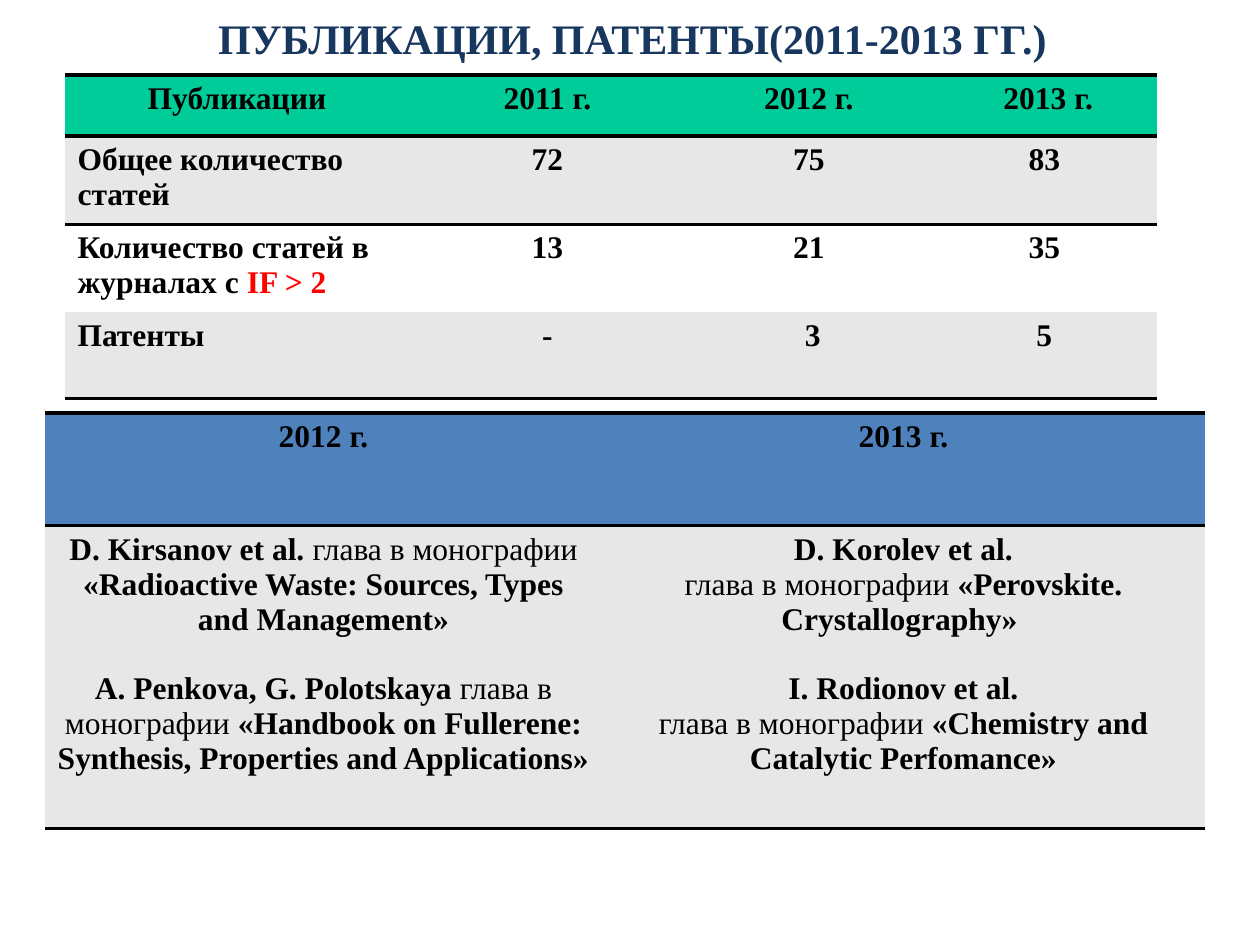
import dataclasses

import lxml.etree
import pptx
import pptx.dml.color
import pptx.enum.text
import pptx.oxml
import pptx.oxml.ns
import pptx.util

PX = 914400 // 126
FONT = "Times New Roman"
BLACK, NAVY, RED = "000000", "17375E", "FF0000"
GREEN, BLUE, GRAY, WHITE = "00CC99", "4F81BD", "E7E7E7", "FFFFFF"
LEFT, CENTER = pptx.enum.text.PP_ALIGN.LEFT, pptx.enum.text.PP_ALIGN.CENTER
NO_STYLE = "{2D5ABB26-0587-4C30-8999-92F81FD0307C}"


@dataclasses.dataclass
class Run:
    text: str
    bold: bool = True
    color: str = BLACK
    size: int = 18


@dataclasses.dataclass
class Para:
    runs: list[Run]
    align: int = CENTER
    before: int = 0


@dataclasses.dataclass
class Grid:
    x: int
    y: int
    cols: list[int]
    rows: list[int]
    fills: list[str]
    cells: list[list[list[Para]]]


def px(n: int) -> int:
    return pptx.util.Emu(n * PX)


def rgb(color: str) -> pptx.dml.color.RGBColor:
    return pptx.dml.color.RGBColor.from_string(color)


def line(tag: str, points: float, color: str) -> lxml.etree._Element:
    return pptx.oxml.parse_xml(
        f'<a:{tag} {pptx.oxml.ns.nsdecls("a")} w="{int(points * 12700)}">'
        f'<a:solidFill><a:srgbClr val="{color}"/></a:solidFill></a:{tag}>')


def write(tf, paras: list[Para]) -> None:
    for i, para in enumerate(paras):
        p = tf.add_paragraph() if i else tf.paragraphs[0]
        p.alignment = para.align
        p.space_before = pptx.util.Pt(para.before)
        for run in para.runs:
            r = p.add_run()
            r.text = run.text
            fmt = {"name": FONT, "size": pptx.util.Pt(run.size), "bold": run.bold}
            for key, value in fmt.items():
                setattr(r.font, key, value)
            r.font.color.rgb = rgb(run.color)


def draw_title(s, text: str) -> None:
    sp = s.shapes.add_textbox(px(84), px(6), px(1097), px(63))
    tf = sp.text_frame
    tf.word_wrap = True
    write(tf, [Para([Run(text, color=NAVY, size=24)])])
    # Thin outline around the letters
    tf.paragraphs[0].runs[0].font._element.insert(0, line("ln", 0.71, BLACK))


def draw_grid(s, grid: Grid) -> None:
    frame = s.shapes.add_table(len(grid.rows), len(grid.cols), px(grid.x), px(grid.y),
                               px(sum(grid.cols)), px(sum(grid.rows)))
    table = frame.table
    table.first_row = table.horz_banding = False
    table._tbl.tblPr.find(pptx.oxml.ns.qn("a:tableStyleId")).text = NO_STYLE
    for col, width in zip(table.columns, grid.cols):
        col.width = px(width)
    last = len(grid.rows) - 1
    for i, (row, height) in enumerate(zip(table.rows, grid.rows)):
        row.height = px(height)
        for cell, paras in zip(row.cells, grid.cells[i]):
            write(cell.text_frame, paras)
            # Rules above and below the header and at the foot
            tcPr = cell._tc.get_or_add_tcPr()
            if i <= 1:
                tcPr.append(line("lnT", 2, BLACK))
            if i in (0, last):
                tcPr.append(line("lnB", 2, BLACK))
            cell.fill.solid()
            cell.fill.fore_color.rgb = rgb(grid.fills[i])


def centered(*texts: str) -> list[list[Para]]:
    return [[Para([Run(text)])] for text in texts]


def labelled(label: list[Run], *values: str) -> list[list[Para]]:
    return [[Para(label, LEFT)]] + centered(*values)


CHAPTER = Run("глава в монографии ", bold=False)
GAP = 20  # one line between chapters, in points

COUNTS = Grid(
    x=65, y=75, cols=[344, 277, 246, 225], rows=[61, 88, 88, 86],
    fills=[GREEN, GRAY, WHITE, GRAY],
    cells=[
        centered("Публикации", "2011 г.", "2012 г.", " 2013 г."),
        labelled([Run("Общее количество статей")], "72", "75", "83"),
        labelled([Run("Количество статей в журналах с "), Run("IF > 2", color=RED)],
                 "13", "21", "35"),
        labelled([Run("Патенты")], "-", " 3", " 5 "),
    ])

CHAPTERS = Grid(
    x=45, y=413, cols=[557, 603], rows=[113, 303], fills=[BLUE, GRAY],
    cells=[
        centered("2012 г.", "2013 г."),
        [
            [Para([Run("D. Kirsanov et al. "), CHAPTER,
                   Run("«Radioactive Waste: Sources, Types and Management»")]),
             Para([Run("A. Penkova, G. Polotskaya "), CHAPTER,
                   Run("«Handbook on Fullerene: Synthesis, Properties and Applications»")],
                  before=GAP)],
            [Para([Run("D. Korolev et al.")]),
             Para([CHAPTER, Run("«Perovskite. Crystallography» ")]),
             Para([Run("I. Rodionov et al.")], before=GAP),
             Para([CHAPTER, Run("«Chemistry and Catalytic Perfomance»")])],
        ],
    ])


def main() -> None:
    prs = pptx.Presentation()
    prs.slide_width, prs.slide_height = pptx.util.Inches(10), pptx.util.Inches(7.5)
    s = prs.slides.add_slide(prs.slide_layouts[6])
    draw_title(s, "ПУБЛИКАЦИИ, ПАТЕНТЫ(2011-2013 ГГ.)")
    for grid in (COUNTS, CHAPTERS):
        draw_grid(s, grid)
    prs.save("out.pptx")


if __name__ == "__main__":
    main()
